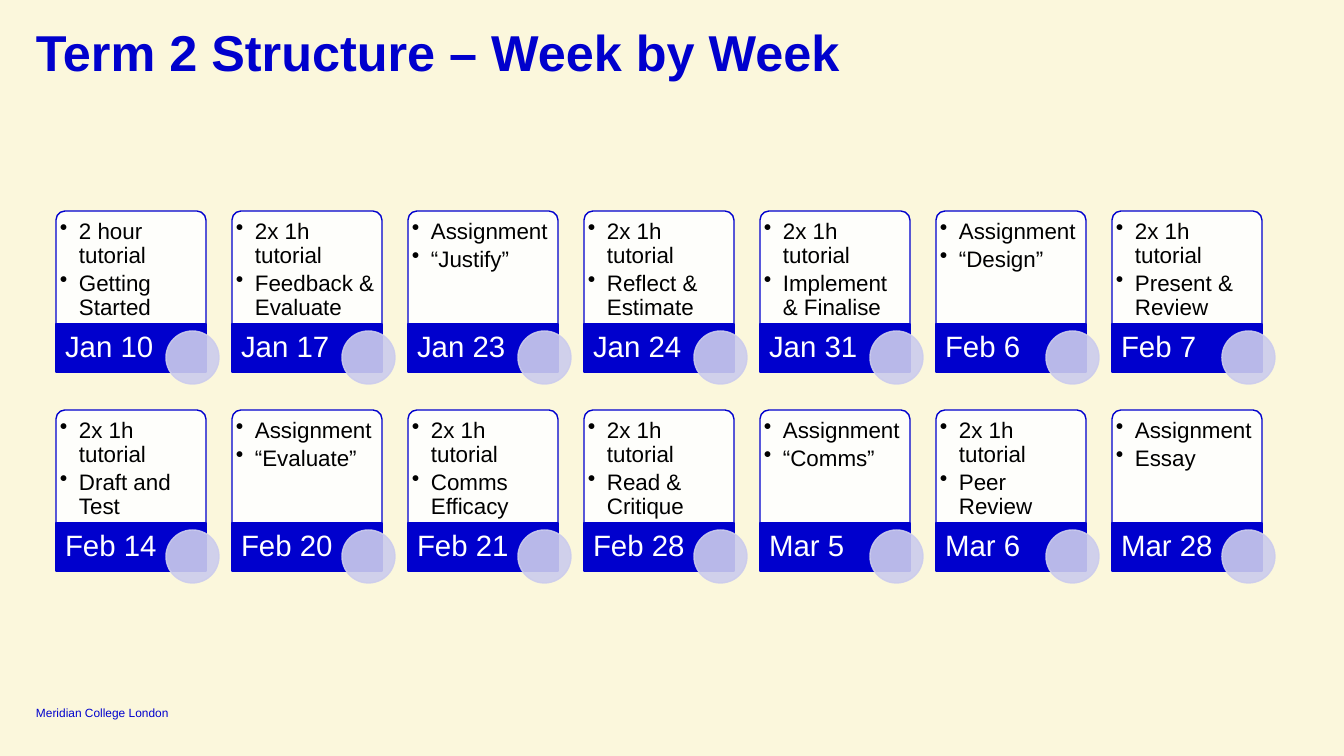
"""Build the week-by-week term structure slide."""

import dataclasses

import lxml.etree
import pptx
import pptx.dml.color
import pptx.dml.fill
import pptx.enum.shapes
import pptx.enum.text
import pptx.oxml.ns
import pptx.shapes.autoshape
import pptx.slide
import pptx.util

EMU_PER_PX = 914400 / 100.8
COLOURS = {
    "background": "FBF7DC",
    "blue": "0000CD",
    "lavender": "CCCCED",
    "white": "FFFFFF",
    "black": "000000",
}
COLUMNS = 7
FIRST_LEFT, FIRST_TOP = 56, 211
COLUMN_PITCH, ROW_PITCH = 176, 199
HANGING_INDENT = 19

SHAPE = pptx.enum.shapes.MSO_SHAPE
ANCHOR = pptx.enum.text.MSO_ANCHOR


@dataclasses.dataclass(frozen=True)
class Area:
    """A rectangle in px."""

    left: int
    top: int
    width: int
    height: int

    def moved(self, across: int, down: int) -> "Area":
        """Return the rectangle shifted by the given px."""
        return Area(self.left + across, self.top + down, self.width, self.height)

    def emu(self) -> list[int]:
        """Return the four lengths in EMU."""
        return [px(length) for length in dataclasses.astuple(self)]


@dataclasses.dataclass(frozen=True)
class TextStyle:
    """The look of the text in one box."""

    size: float
    colour: str
    bold: bool = False
    anchor: ANCHOR = ANCHOR.TOP
    insets: tuple[int, int, int, int] = (0, 0, 0, 0)
    line_spacing: float = 0.9
    space_after: float = 0
    bulleted: bool = False


@dataclasses.dataclass(frozen=True)
class ShapeStyle:
    """The look of one preset shape."""

    preset: SHAPE
    fill: str
    line: str
    fill_opacity: int = 100
    line_opacity: int = 100
    adjustments: tuple[float, ...] = ()


@dataclasses.dataclass(frozen=True)
class Session:
    """One dated event of the term."""

    date: str
    items: tuple[str, str]


TITLE = TextStyle(36, "blue", bold=True)
FOOTER = TextStyle(8.5, "blue", anchor=ANCHOR.BOTTOM, line_spacing=1.0)
ITEMS = TextStyle(16, "black", insets=(2, 7, 2, 2), space_after=2.6, bulleted=True)
DATE = TextStyle(21, "white", anchor=ANCHOR.MIDDLE, insets=(9, 0, 3, 0))

CARD = ShapeStyle(SHAPE.ROUND_2_SAME_RECTANGLE, "white", "blue", 90, adjustments=(0.08, 0))
BAND = ShapeStyle(SHAPE.RECTANGLE, "blue", "blue")
DOT = ShapeStyle(SHAPE.OVAL, "lavender", "lavender", 90, 90)

CARD_AREA = Area(0, 0, 150, 113)
ITEMS_AREA = Area(2, 2, 145, 110)
BAND_AREA = Area(0, 113, 150, 48)
DATE_AREA = Area(0, 113, 106, 48)
DOT_AREA = Area(110, 120, 53, 53)

TUTORIAL = "2x 1h tutorial"
ASSIGNMENT = "Assignment"
SESSIONS = [
    Session("Jan 10", ("2 hour tutorial", "Getting Started")),
    Session("Jan 17", (TUTORIAL, "Feedback & Evaluate")),
    Session("Jan 23", (ASSIGNMENT, "“Justify”")),
    Session("Jan 24", (TUTORIAL, "Reflect & Estimate")),
    Session("Jan 31", (TUTORIAL, "Implement & Finalise")),
    Session("Feb 6", (ASSIGNMENT, "“Design”")),
    Session("Feb 7", (TUTORIAL, "Present & Review")),
    Session("Feb 14", (TUTORIAL, "Draft and Test")),
    Session("Feb 20", (ASSIGNMENT, "“Evaluate”")),
    Session("Feb 21", (TUTORIAL, "Comms Efficacy")),
    Session("Feb 28", (TUTORIAL, "Read & Critique")),
    Session("Mar 5", (ASSIGNMENT, "“Comms”")),
    Session("Mar 6", (TUTORIAL, "Peer Review")),
    Session("Mar 28", (ASSIGNMENT, "Essay")),
]


def px(length: int) -> int:
    """Turn px into EMU."""
    return round(length * EMU_PER_PX)


def rgb(name: str) -> pptx.dml.color.RGBColor:
    """Look up a named colour."""
    return pptx.dml.color.RGBColor.from_string(COLOURS[name])


def paint(fill: pptx.dml.fill.FillFormat, colour: str, opacity: int = 100) -> None:
    """Give a fill a solid colour with an opacity in percent."""
    fill.solid()
    fill.fore_color.rgb = rgb(colour)
    if opacity < 100:
        tag = pptx.oxml.ns.qn("a:alpha")
        for element in fill._xPr.iter(pptx.oxml.ns.qn("a:srgbClr")):
            if element.getparent().getparent() is fill._xPr:
                lxml.etree.SubElement(element, tag, val=str(opacity * 1000))


def add_bullet(paragraph) -> None:
    """Give a paragraph a hanging bullet."""
    properties = paragraph._p.get_or_add_pPr()
    properties.set("marL", str(px(HANGING_INDENT)))
    properties.set("indent", str(-px(HANGING_INDENT)))
    lxml.etree.SubElement(properties, pptx.oxml.ns.qn("a:buChar"), char="•")


def draw_text(page: pptx.slide.Slide, area: Area, lines: tuple[str, ...], style: TextStyle) -> None:
    """Add a text box with one paragraph per line."""
    frame = page.shapes.add_textbox(*area.emu()).text_frame
    frame.word_wrap = True
    frame.vertical_anchor = style.anchor
    frame.margin_left, frame.margin_top, frame.margin_right, frame.margin_bottom = map(px, style.insets)
    frame.text = "\n".join(lines)
    for paragraph in frame.paragraphs:
        if style.bulleted:
            paragraph.level = 1
            add_bullet(paragraph)
        paragraph.line_spacing = style.line_spacing
        paragraph.space_after = pptx.util.Pt(style.space_after)
        paragraph.font.name = "Arial"
        paragraph.font.size = pptx.util.Pt(style.size)
        paragraph.font.bold = style.bold
        paragraph.font.color.rgb = rgb(style.colour)


def draw_shape(page: pptx.slide.Slide, area: Area, style: ShapeStyle) -> None:
    """Add a preset shape."""
    shape = page.shapes.add_shape(style.preset, *area.emu())
    shape.shadow.inherit = False
    for index, value in enumerate(style.adjustments):
        shape.adjustments[index] = value
    paint(shape.fill, style.fill, style.fill_opacity)
    shape.line.width = pptx.util.Pt(1)
    paint(shape.line.fill, style.line, style.line_opacity)


def draw_session(page: pptx.slide.Slide, session: Session, left: int, top: int) -> None:
    """Add one card with its items, date band and dot."""
    draw_shape(page, CARD_AREA.moved(left, top), CARD)
    draw_text(page, ITEMS_AREA.moved(left, top), session.items, ITEMS)
    draw_shape(page, BAND_AREA.moved(left, top), BAND)
    draw_text(page, DATE_AREA.moved(left, top), (session.date,), DATE)
    draw_shape(page, DOT_AREA.moved(left, top), DOT)


def main() -> None:
    """Build and save the deck."""
    deck = pptx.Presentation()
    deck.slide_width, deck.slide_height = px(1344), px(756)
    page = deck.slides.add_slide(deck.slide_layouts[6])
    paint(page.background.fill, "background")
    draw_text(page, Area(36, 705, 156, 15), ("Meridian College London",), FOOTER)
    draw_text(page, Area(36, 28, 1272, 41), ("Term 2 Structure – Week by Week",), TITLE)
    for index, session in enumerate(SESSIONS):
        row, column = divmod(index, COLUMNS)
        draw_session(page, session, FIRST_LEFT + column * COLUMN_PITCH, FIRST_TOP + row * ROW_PITCH)
    deck.save("out.pptx")


if __name__ == "__main__":
    main()
